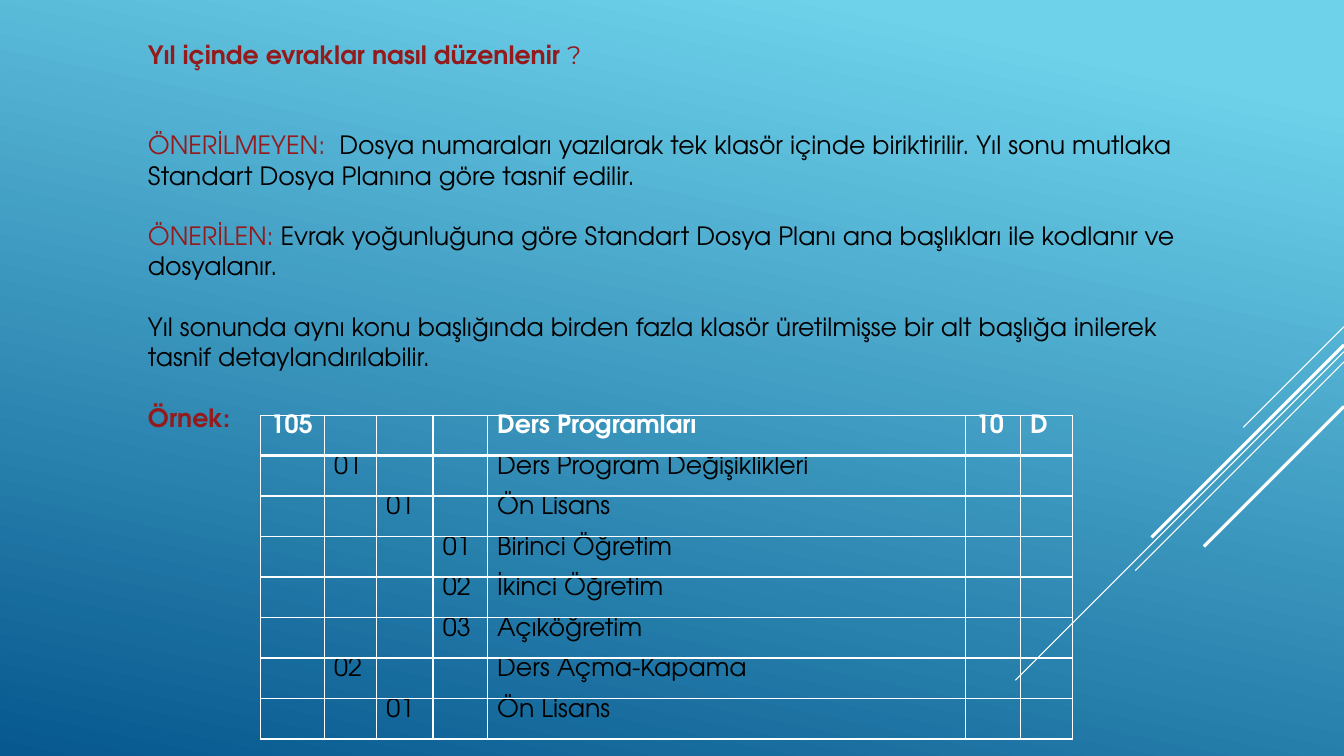
"""Build a slide on filing documents during the year, with a sample file plan table."""
from lxml import etree
from pptx import Presentation
from pptx import util as u
from pptx.dml.color import RGBColor
from pptx.enum import shapes, text
from pptx.oxml import ns

COLORS = {"sky": "6ED2EB", "navy": "06588E", "red": "941A1B", "black": "000000", "white": "FFFFFF"}
FONT = "TeX Gyre Adventor"


def add_run(p, words, color, bold=False, name=FONT):
    r = p.add_run()
    r.text = words
    for key, value in {"name": name, "size": u.Pt(18), "bold": bold}.items():
        setattr(r.font, key, value)
    r.font.color.rgb = RGBColor.from_string(COLORS[color])


def add_border(tcPr, side, width):
    ln = etree.SubElement(tcPr, ns.qn(f"a:ln{side}"), w=str(u.Pt(width)))
    fill = etree.SubElement(ln, ns.qn("a:solidFill"))
    etree.SubElement(fill, ns.qn("a:srgbClr"), val=COLORS["white"])


prs = Presentation()
prs.slide_width, prs.slide_height = u.Cm(33.87), u.Cm(19.05)
s = prs.slides.add_slide(prs.slide_layouts[6])

bg = s.background.fill
bg.gradient()
bg.gradient_angle = 258
for stop, position, color in zip(bg.gradient_stops, (0.1, 1), ("sky", "navy")):
    stop.position = position
    stop.color.rgb = RGBColor.from_string(COLORS[color])

right = 33.87
for top, run, width in [(8.23, 2.54, 0.75), (8.86, 8.28, 0.75), (9.12, 5.26, 0.75),
                        (8.69, 4.85, 2.25), (10.24, 3.53, 2.25)]:
    sp = s.shapes.add_connector(shapes.MSO_CONNECTOR.STRAIGHT,
                                u.Cm(right), u.Cm(top), u.Cm(right - run), u.Cm(top + run))
    sp.line.color.rgb = RGBColor.from_string(COLORS["white"])
    sp.line.width = u.Pt(width)
    etree.SubElement(sp._element.spPr, ns.qn("a:effectLst"))

paragraphs = [
    (0, [("Yıl içinde evraklar nasıl düzenlenir ", "red", True), ("?", "red", False, "Montserrat")]),
    (43.2, [("ÖNERİLMEYEN:  ", "red"),
            ("Dosya numaraları yazılarak tek klasör içinde biriktirilir. Yıl sonu mutlaka "
             "Standart Dosya Planına göre tasnif edilir.", "black")]),
    (21.6, [("ÖNERİLEN: ", "red"),
            ("Evrak yoğunluğuna göre Standart Dosya Planı ana başlıkları ile kodlanır ve "
             "dosyalanır.", "black")]),
    (21.6, [("Yıl sonunda aynı konu başlığında birden fazla klasör üretilmişse bir alt başlığa "
             "inilerek tasnif detaylandırılabilir.", "black")]),
    (21.6, [("Örnek:", "red", True)]),
]
tf = s.shapes.add_textbox(u.Cm(3.48), u.Cm(0.86), u.Cm(26.64), u.Cm(16.41)).text_frame
tf.word_wrap = True
for i, (gap, runs) in enumerate(paragraphs):
    p = tf.add_paragraph() if i else tf.paragraphs[0]
    p.space_before = u.Pt(gap)
    for run in runs:
        add_run(p, *run)

widths = [1.6, 1.32, 1.42, 1.37, 12.06, 1.37, 1.32]
rows = [
    ["105", "", "", "", "Ders Programları", "10", "D"],
    ["", "01", "", "", "Ders Program Değişiklikleri", "", ""],
    ["", "", "01", "", "Ön Lisans", "", ""],
    ["", "", "", "01", "Birinci Öğretim", "", ""],
    ["", "", "", "02", "İkinci Öğretim", "", ""],
    ["", "", "", "03", "Açıköğretim", "", ""],
    ["", "02", "", "", "Ders Açma-Kapama", "", ""],
    ["", "", "01", "", "Ön Lisans", "", ""],
]
row_height = 1.02
table = s.shapes.add_table(len(rows), len(widths), u.Cm(6.57), u.Cm(10.46),
                           u.Cm(sum(widths)), u.Cm(row_height * len(rows))).table
table.first_row = table.horz_banding = False
for column, width in zip(table.columns, widths):
    column.width = u.Cm(width)
for i, row in enumerate(rows):
    table.rows[i].height = u.Cm(row_height)
    for j, words in enumerate(row):
        cell = table.cell(i, j)
        for key, value in {"margin_top": 0, "margin_bottom": 0, "margin_left": u.Cm(0.25),
                           "margin_right": u.Cm(0.1),
                           "vertical_anchor": text.MSO_ANCHOR.TOP}.items():
            setattr(cell, key, value)
        tcPr = cell._tc.get_or_add_tcPr()
        for side, width in {"L": 1, "R": 1, "T": 3 if i == 1 else 1, "B": 3 if i == 0 else 1}.items():
            add_border(tcPr, side, width)
        cell.fill.background()
        if words:
            add_run(cell.text_frame.paragraphs[0], words, "black" if i else "white", i == 0)

prs.save("out.pptx")
